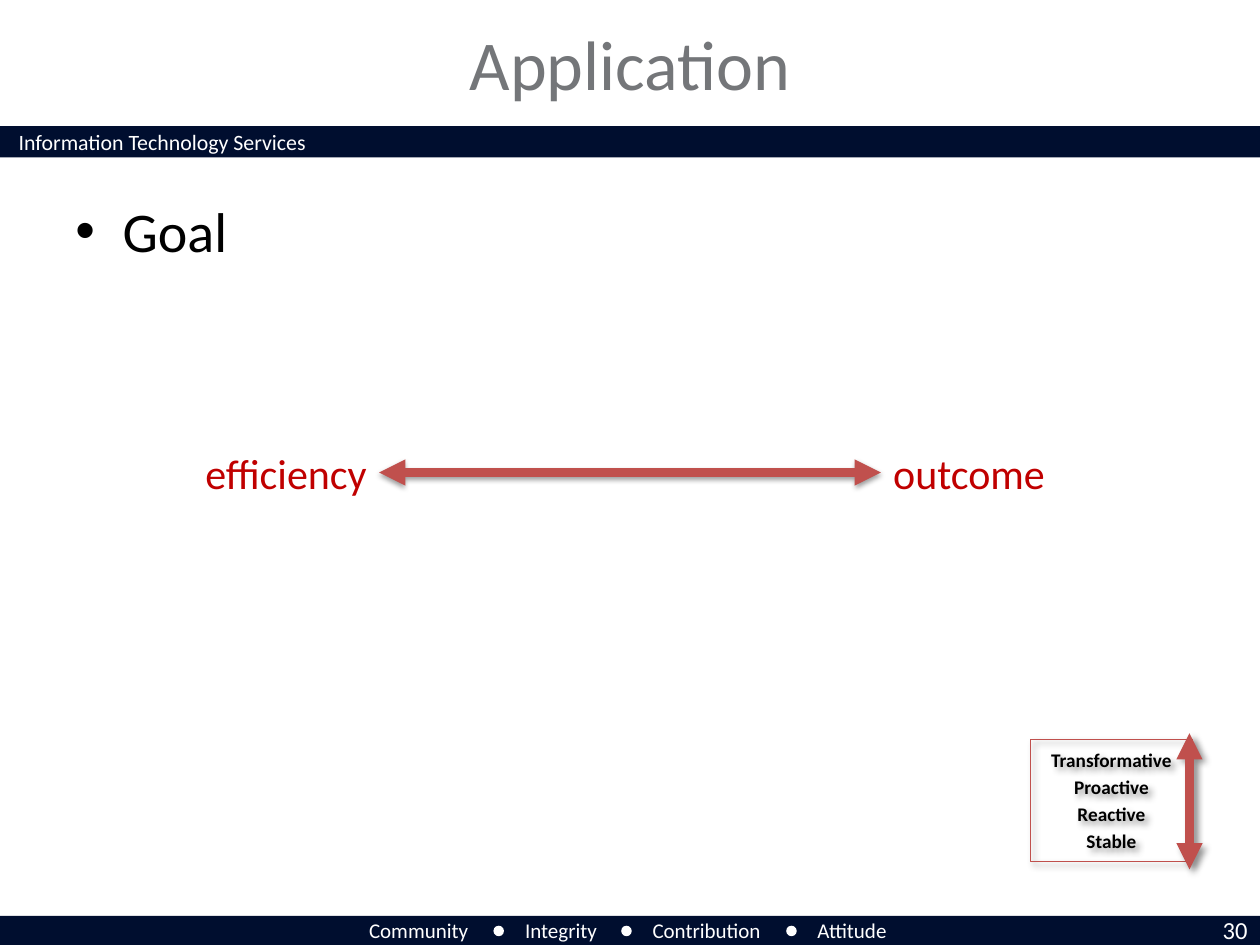
from lxml import etree
from pptx import Presentation
from pptx.dml.color import RGBColor
from pptx.enum import shapes, text
from pptx.oxml import parse_xml
from pptx.oxml.ns import nsdecls, qn
from pptx.util import Pt

NAVY = RGBColor(0x00, 0x0E, 0x2F)
WHITE = RGBColor(0xFF, 0xFF, 0xFF)
BLACK = RGBColor(0x00, 0x00, 0x00)
GRAY = RGBColor(0x74, 0x76, 0x79)
RED = RGBColor(0xC0, 0x00, 0x00)
BRICK = RGBColor(0xC0, 0x50, 0x4D)
LEFT, CENTER, RIGHT = text.PP_ALIGN.LEFT, text.PP_ALIGN.CENTER, text.PP_ALIGN.RIGHT


def add_label(slide, words, box, size, color, align=LEFT, wrap=False):
    label = slide.shapes.add_textbox(*map(Pt, box))
    label.text_frame.word_wrap = wrap
    paragraph = label.text_frame.paragraphs[0]
    paragraph.text = words
    paragraph.alignment = align
    run = paragraph.runs[0]
    run.font.name, run.font.size, run.font.color.rgb = "Calibri", Pt(size), color
    return paragraph


def add_shadow(properties, opacity, blur, distance, degrees):
    properties.append(parse_xml(
        f'<a:effectLst {nsdecls("a")}><a:outerShdw blurRad="{Pt(blur)}" dist="{Pt(distance)}" '
        f'dir="{degrees * 60000}" algn="ctr" rotWithShape="0"><a:srgbClr val="000000">'
        f'<a:alpha val="{opacity * 1000}"/></a:srgbClr></a:outerShdw></a:effectLst>'))


presentation = Presentation()
presentation.slide_width, presentation.slide_height = Pt(720), Pt(540)
slide = presentation.slides.add_slide(presentation.slide_layouts[5])

title = slide.shapes.title
title.left, title.top, title.width, title.height = Pt(72), Pt(7.2), Pt(576), Pt(57.6)
title.text_frame.text = "Application"
title.text_frame.vertical_anchor = text.MSO_ANCHOR.MIDDLE
paragraph = title.text_frame.paragraphs[0]
paragraph.alignment = CENTER
font = paragraph.runs[0].font
font.name, font.size, font.color.rgb = "Calibri", Pt(40), GRAY

bands = [(0, top, 720, 18, shapes.MSO_SHAPE.RECTANGLE, NAVY) for top in (72, 523.4)]
dots = [(left, 529, 6, 6, shapes.MSO_SHAPE.OVAL, WHITE) for left in (282, 355, 449.3)]
for *box, kind, color in bands + dots:
    shape = slide.shapes.add_shape(kind, *map(Pt, box))
    shape.shadow.inherit = False
    shape.fill.solid()
    shape.fill.fore_color.rgb = color
    shape.line.fill.background()

add_label(slide, "Information Technology Services", (3.6, 69.8, 244.8, 23), 12.5, WHITE, wrap=True)
values = [("Community", 203.8, 72), ("Integrity", 293, 57.6),
          ("Contribution", 365.8, 79.2), ("Attitude", 460, 56.2)]
for words, left, width in values:
    add_label(slide, words, (left, 520.6, width, 21.6), 12, WHITE)
add_label(slide, "30", (665.3, 519.1, 54.7, 24.5), 14, WHITE, RIGHT, wrap=True)

goal = add_label(slide, "Goal", (36, 108.7, 648, 58.3), 32, BLACK, wrap=True)
goal_properties = goal._p.get_or_add_pPr()
goal_properties.set("marL", str(Pt(27)))
goal_properties.set("indent", str(-Pt(27)))
etree.SubElement(goal_properties, qn("a:buFont"), typeface="Arial")
etree.SubElement(goal_properties, qn("a:buChar"), char="•")

add_label(slide, "efficiency", (108, 252, 108.7, 36), 24, RED, RIGHT)
add_label(slide, "outcome", (503.3, 252, 102.2, 36), 24, RED)

levels = slide.shapes.add_shape(shapes.MSO_SHAPE.RECTANGLE, Pt(589), Pt(422.6), Pt(92.2), Pt(69.8))
levels.shadow.inherit = False
levels.fill.background()
levels.line.color.rgb = BRICK
levels.line.width = Pt(0.75)
levels_properties = levels._element.spPr
levels_properties.remove(levels_properties.find(qn("a:effectLst")))
add_shadow(levels_properties, 40, 4, 3, 45)
levels.text_frame.word_wrap = True
levels.text_frame.vertical_anchor = text.MSO_ANCHOR.MIDDLE
levels.text_frame.text = "Transformative\nProactive\nReactive\nStable"
for index, paragraph in enumerate(levels.text_frame.paragraphs):
    paragraph.alignment = CENTER
    if index:
        paragraph.space_before = Pt(2.2)
    font = paragraph.runs[0].font
    font.name, font.size, font.bold, font.color.rgb = "Calibri", Pt(11), True, BLACK

arrows = [((216.7, 270, 503.3, 270), (38, 3.1, 1.6, 90)),
          ((679.7, 419, 679.7, 496.8), (40, 4, 3, 45))]
for ends, shadow in arrows:
    arrow = slide.shapes.add_connector(shapes.MSO_CONNECTOR.STRAIGHT, *map(Pt, ends))
    arrow.line.color.rgb = BRICK
    arrow.line.width = Pt(5)
    for end in ("a:headEnd", "a:tailEnd"):
        etree.SubElement(arrow.line._get_or_add_ln(), qn(end), type="triangle")
    add_shadow(arrow._element.spPr, *shadow)

presentation.save("out.pptx")
